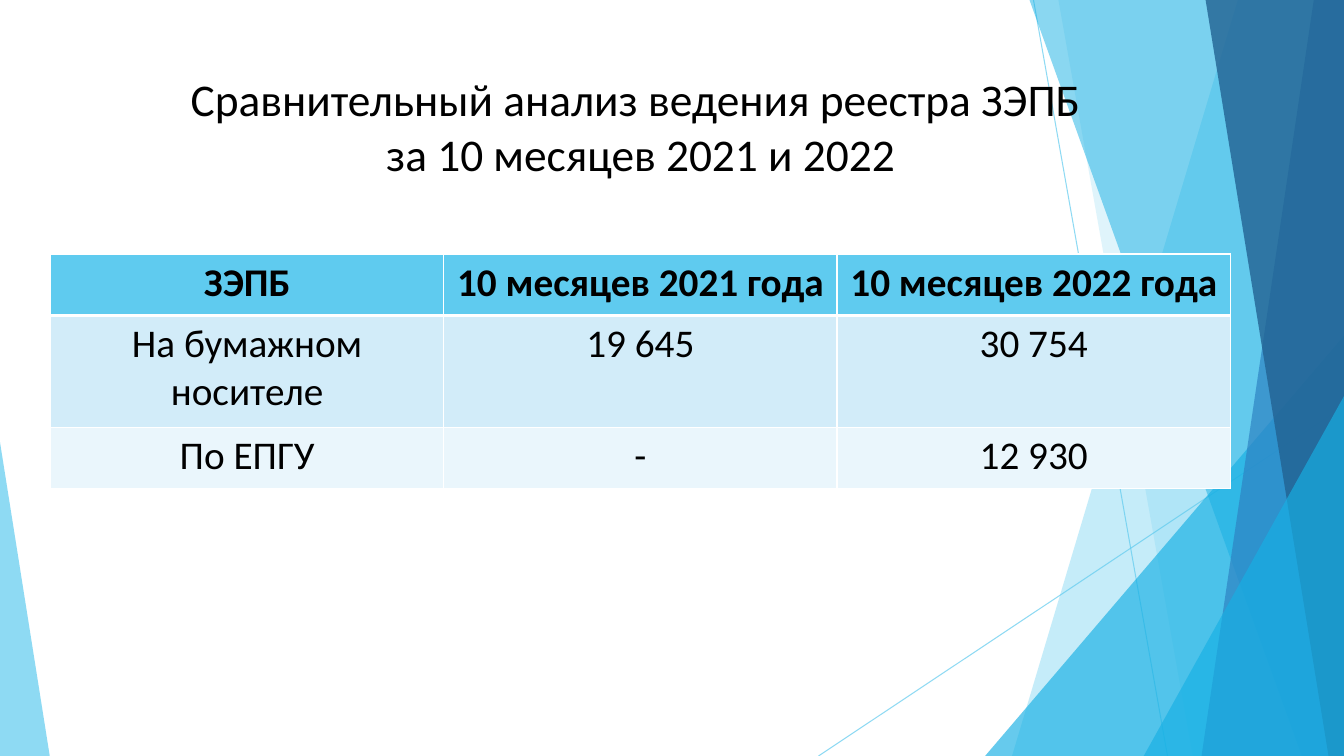
from lxml.etree import SubElement
from pptx import Presentation
from pptx.dml.color import RGBColor
from pptx.enum.shapes import MSO_CONNECTOR, MSO_SHAPE
from pptx.enum.text import MSO_ANCHOR, PP_ALIGN
from pptx.oxml.ns import qn
from pptx.util import Inches, Pt

WIDE, HIGH = Inches(13.33), Inches(7.5)
SKY = RGBColor(0x5F, 0xCB, 0xEF)
AQUA = RGBColor(0x17, 0xB0, 0xE4)
BLUE = RGBColor(0x2E, 0x83, 0xC3)
NAVY = RGBColor(0x22, 0x62, 0x92)
PALE = RGBColor(0xD2, 0xEC, 0xF9)
MIST = RGBColor(0xEA, 0xF6, 0xFC)
WHITE = RGBColor(0xFF, 0xFF, 0xFF)
BLACK = RGBColor(0, 0, 0)

# Boxes are left, top, width, height in percent of the slide
PAGE = (0, 0, 100, 100)
HEAD = (5.55, 8.93, 84.25, 15.47)
GRID = (3.75, 33.6, 87.8, 31.07)

RAYS = [((76.9, 0), (86.87, 100)), ((100, 53.73), (60.9, 100))]
# Top left x, bottom left x, colour, opacity; every band runs to the right edge
BANDS = [(92.1, 75.3, SKY, 36), (78.75, 88.75, SKY, 20)]
FRONT = [(76.6, 96.85, AQUA, 50), (97.75, 89.4, BLUE, 70), (89.7, 98.85, NAVY, 80)]
# Left, top, width, apex position, colour, opacity; every wedge stands on the bottom
BACK_WEDGE = (73.3, 44.4, 26.7, 1, AQUA, 66)
WEDGES = [(85.1, 52.4, 14.9, 1, AQUA, 66), (0, 58.5, 3.7, 0, SKY, 70)]

TITLE = "Сравнительный анализ ведения реестра ЗЭПБ \vза 10 месяцев 2021 и 2022"
ROWS = [
    ("ЗЭПБ", "10 месяцев 2021 года", "10 месяцев 2022 года"),
    ("На бумажном носителе", "19 645", "30 754"),
    ("По ЕПГУ", "-", "12 930"),
]
TALL = (0.61, 1.11, 0.61)
FILLS = (SKY, PALE, MIST)


def place(box, x, y):
    """Turn percentages of a box into a point on the slide."""
    left, top, width, height = box
    return (round(WIDE * (left + width * x / 100) / 100),
            round(HIGH * (top + height * y / 100) / 100))


def frame(box):
    """Left, top, width and height of a box in slide units."""
    left, top = place(box, 0, 0)
    right, foot = place(box, 100, 100)
    return left, top, right - left, foot - top


def fade(fill, opacity):
    color = fill._xPr.find(".//" + qn("a:srgbClr"))
    SubElement(color, qn("a:alpha"), val=str(opacity * 1000))


def tint(shape, color, opacity):
    shape.shadow.inherit = False
    shape.fill.solid()
    shape.fill.fore_color.rgb = color
    fade(shape.fill, opacity)
    shape.line.fill.background()


def add_ray(slide, box, start, end):
    ray = slide.shapes.add_connector(
        MSO_CONNECTOR.STRAIGHT, *place(box, *start), *place(box, *end))
    ray.line.width = Pt(0.75)
    ray.line.color.rgb = SKY
    fade(ray.line.fill, 70)
    SubElement(ray._element.spPr, qn("a:effectLst"))


def add_band(slide, box, top, foot, color, opacity):
    path = slide.shapes.build_freeform(*place(box, top, 0))
    path.add_line_segments([place(box, 100, 0), place(box, 100, 100),
                            place(box, foot, 100)])
    tint(path.convert_to_shape(), color, opacity)


def add_wedge(slide, box, left, top, width, apex, color, opacity):
    x, y = place(box, left, top)
    right, foot = place(box, left + width, 100)
    wedge = slide.shapes.add_shape(
        MSO_SHAPE.ISOSCELES_TRIANGLE, x, y, right - x, foot - y)
    wedge.adjustments[0] = apex
    tint(wedge, color, opacity)


def add_decor(slide, box):
    for ray in RAYS:
        add_ray(slide, box, *ray)
    for band in BANDS:
        add_band(slide, box, *band)
    add_wedge(slide, box, *BACK_WEDGE)
    for band in FRONT:
        add_band(slide, box, *band)
    for wedge in WEDGES:
        add_wedge(slide, box, *wedge)


def write(text_frame, text, size, bold=False):
    para = text_frame.paragraphs[0]
    para.text = text
    para.alignment = PP_ALIGN.CENTER
    look = {"name": "Calibri", "size": Pt(size), "bold": bold}
    for run in para.runs:
        for key, value in look.items():
            setattr(run.font, key, value)
        run.font.color.rgb = BLACK


def add_title(slide, box):
    text_frame = slide.shapes.add_textbox(*frame(box)).text_frame
    text_frame.word_wrap = True
    text_frame.vertical_anchor = MSO_ANCHOR.MIDDLE
    write(text_frame, TITLE, 32.4)


def edge(cell, widths):
    """Draw white cell borders, given widths in points by side."""
    props = cell._tc.get_or_add_tcPr()
    for side, width in widths.items():
        line = SubElement(props, qn("a:ln" + side), w=str(Pt(width)))
        fill = SubElement(line, qn("a:solidFill"))
        SubElement(fill, qn("a:srgbClr"), val=str(WHITE))


def add_grid(slide, box):
    left, top, width, height = frame(box)
    table = slide.shapes.add_table(
        len(ROWS), len(ROWS[0]), left, top, width, height).table
    table.horz_banding = False
    for i, texts in enumerate(ROWS):
        table.rows[i].height = round(height * TALL[i] / sum(TALL))
        above, below = (3 if i == 1 else 1), (3 if i == 0 else 1)
        for j, text in enumerate(texts):
            cell = table.cell(i, j)
            edge(cell, {"L": 1, "R": 1, "T": above, "B": below})
            cell.fill.solid()
            cell.fill.fore_color.rgb = FILLS[i]
            write(cell.text_frame, text, 28, bold=i == 0)


def main():
    deck = Presentation()
    deck.slide_width, deck.slide_height = WIDE, HIGH
    slide = deck.slides.add_slide(deck.slide_layouts[6])
    add_decor(slide, PAGE)
    add_title(slide, HEAD)
    add_grid(slide, GRID)
    deck.save("out.pptx")


if __name__ == "__main__":
    main()
